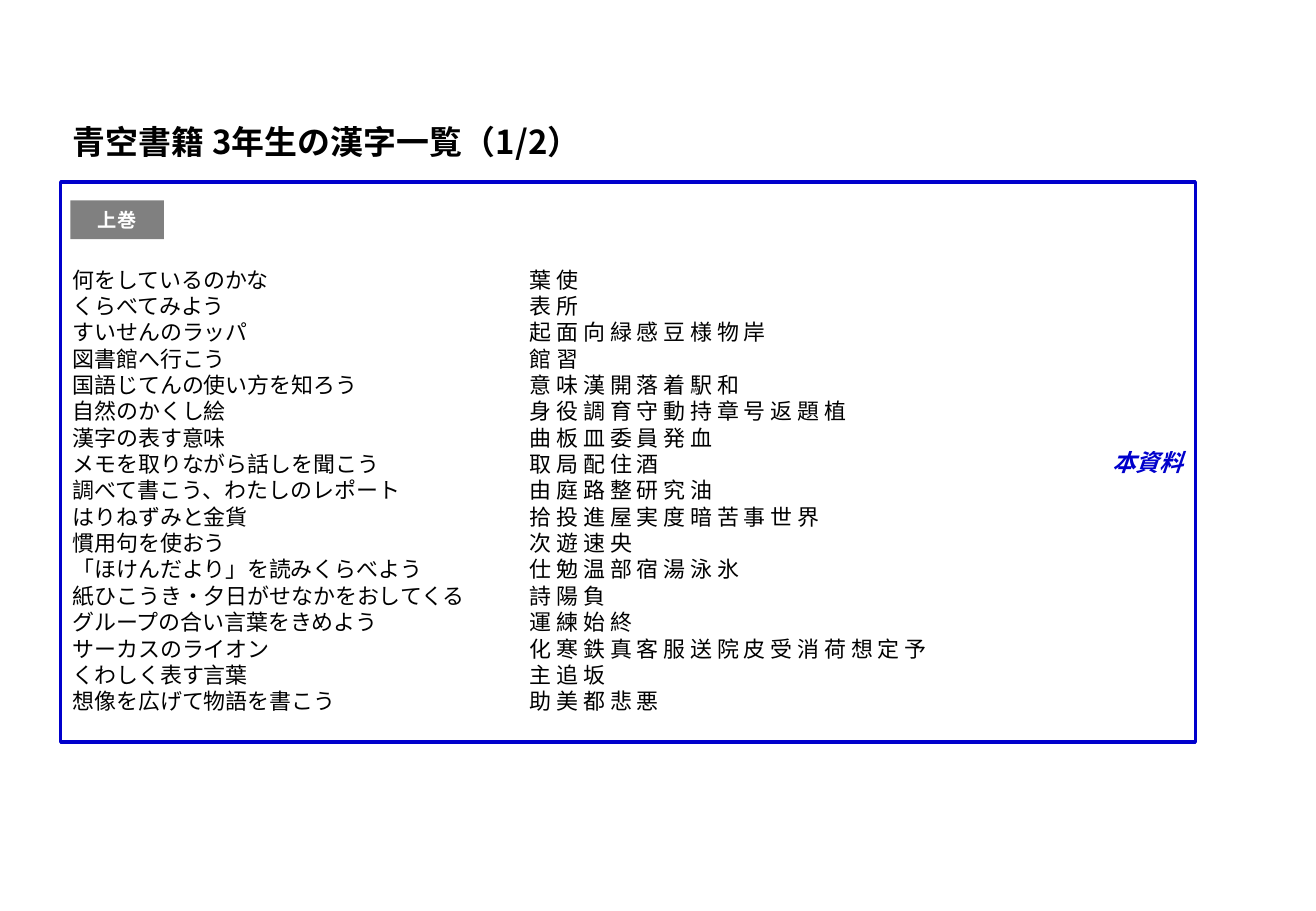
"""Build a slide listing the third-grade kanji of each lesson in the first volume."""
import pptx
import pptx.dml.color
import pptx.enum.shapes
import pptx.enum.text
import pptx.oxml
import pptx.oxml.ns
import pptx.util

Pt = pptx.util.Pt
RGBColor = pptx.dml.color.RGBColor
ALIGN = pptx.enum.text.PP_ALIGN
ANCHOR = pptx.enum.text.MSO_ANCHOR
RECTANGLE = pptx.enum.shapes.MSO_SHAPE.RECTANGLE

FONT = "Noto Sans CJK JP"
BLACK = RGBColor(0x00, 0x00, 0x00)
WHITE = RGBColor(0xFF, 0xFF, 0xFF)
GRAY = RGBColor(0x80, 0x80, 0x80)
BLUE = RGBColor(0x00, 0x00, 0xCC)
KANJI_TAB = Pt(271)

LESSONS = [
    ("何をしているのかな", "葉 使"),
    ("くらべてみよう", "表 所"),
    ("すいせんのラッパ", "起 面 向 緑 感 豆 様 物 岸"),
    ("図書館へ行こう", "館 習"),
    ("国語じてんの使い方を知ろう", "意 味 漢 開 落 着 駅 和"),
    ("自然のかくし絵", "身 役 調 育 守 動 持 章 号 返 題 植"),
    ("漢字の表す意味", "曲 板 皿 委 員 発 血"),
    ("メモを取りながら話しを聞こう", "取 局 配 住 酒"),
    ("調べて書こう、わたしのレポート", "由 庭 路 整 研 究 油"),
    ("はりねずみと金貨", "拾 投 進 屋 実 度 暗 苦 事 世 界"),
    ("慣用句を使おう", "次 遊 速 央"),
    ("「ほけんだより」を読みくらべよう", "仕 勉 温 部 宿 湯 泳 氷"),
    ("紙ひこうき・夕日がせなかをおしてくる", "詩 陽 負"),
    ("グループの合い言葉をきめよう", "運 練 始 終"),
    ("サーカスのライオン", "化 寒 鉄 真 客 服 送 院 皮 受 消 荷 想 定 予"),
    ("くわしく表す言葉", "主 追 坂"),
    ("想像を広げて物語を書こう", "助 美 都 悲 悪"),
]


def add_run(paragraph, text, size, color, bold=False, italic=False):
    run = paragraph.add_run()
    run.text = text
    font = run.font
    font.name, font.size, font.bold, font.italic = FONT, Pt(size), bold, italic
    font.color.rgb = color
    east_asian = pptx.oxml.parse_xml(
        f'<a:ea {pptx.oxml.ns.nsdecls("a")} typeface="{FONT}"/>')
    run.font._element.find(pptx.oxml.ns.qn("a:latin")).addnext(east_asian)


prs = pptx.Presentation()
prs.slide_width, prs.slide_height = Pt(780), Pt(540)
slide = prs.slides.add_slide(prs.slide_layouts[5])

heading = slide.shapes.title
heading.left, heading.top, heading.width, heading.height = Pt(36), Pt(68.4), Pt(566.6), Pt(31)
heading.text_frame.auto_size = pptx.enum.text.MSO_AUTO_SIZE.NONE
heading.text_frame.vertical_anchor = ANCHOR.MIDDLE
heading_line = heading.text_frame.paragraphs[0]
heading_line.alignment = ALIGN.LEFT
add_run(heading_line, "青空書籍 3年生の漢字一覧（1/2）", 19.5, BLACK, bold=True)

lesson_list = slide.shapes.add_textbox(Pt(36), Pt(135.4), Pt(559.4), Pt(293))
lesson_frame = lesson_list.text_frame
lesson_frame.word_wrap = True
lesson_frame.margin_top = Pt(22.4)
for index, (lesson, kanji) in enumerate(LESSONS):
    line = lesson_frame.add_paragraph() if index else lesson_frame.paragraphs[0]
    line.line_spacing = Pt(15.63)
    line._p.get_or_add_pPr().append(pptx.oxml.parse_xml(
        f'<a:tabLst {pptx.oxml.ns.nsdecls("a")}><a:tab pos="{KANJI_TAB}" algn="l"/></a:tabLst>'))
    add_run(line, f"{lesson}\t{kanji}", 13, BLACK)

volume = slide.shapes.add_shape(RECTANGLE, Pt(41.8), Pt(118.8), Pt(55.4), Pt(23))
volume.shadow.inherit = False
volume.fill.solid()
volume.fill.fore_color.rgb = GRAY
volume.line.fill.background()
volume.text_frame.vertical_anchor = ANCHOR.MIDDLE
volume_line = volume.text_frame.paragraphs[0]
volume_line.alignment = ALIGN.CENTER
add_run(volume_line, "上巻", 11.4, WHITE, bold=True)

frame = slide.shapes.add_shape(RECTANGLE, Pt(36), Pt(108), Pt(672.5), Pt(332))
frame.shadow.inherit = False
frame.fill.background()
frame.line.color.rgb = BLUE
frame.line.width = Pt(2)
frame.text_frame.vertical_anchor = ANCHOR.MIDDLE
frame_line = frame.text_frame.paragraphs[0]
frame_line.alignment = ALIGN.RIGHT
add_run(frame_line, "本資料", 14, BLUE, bold=True, italic=True)

prs.save("out.pptx")
